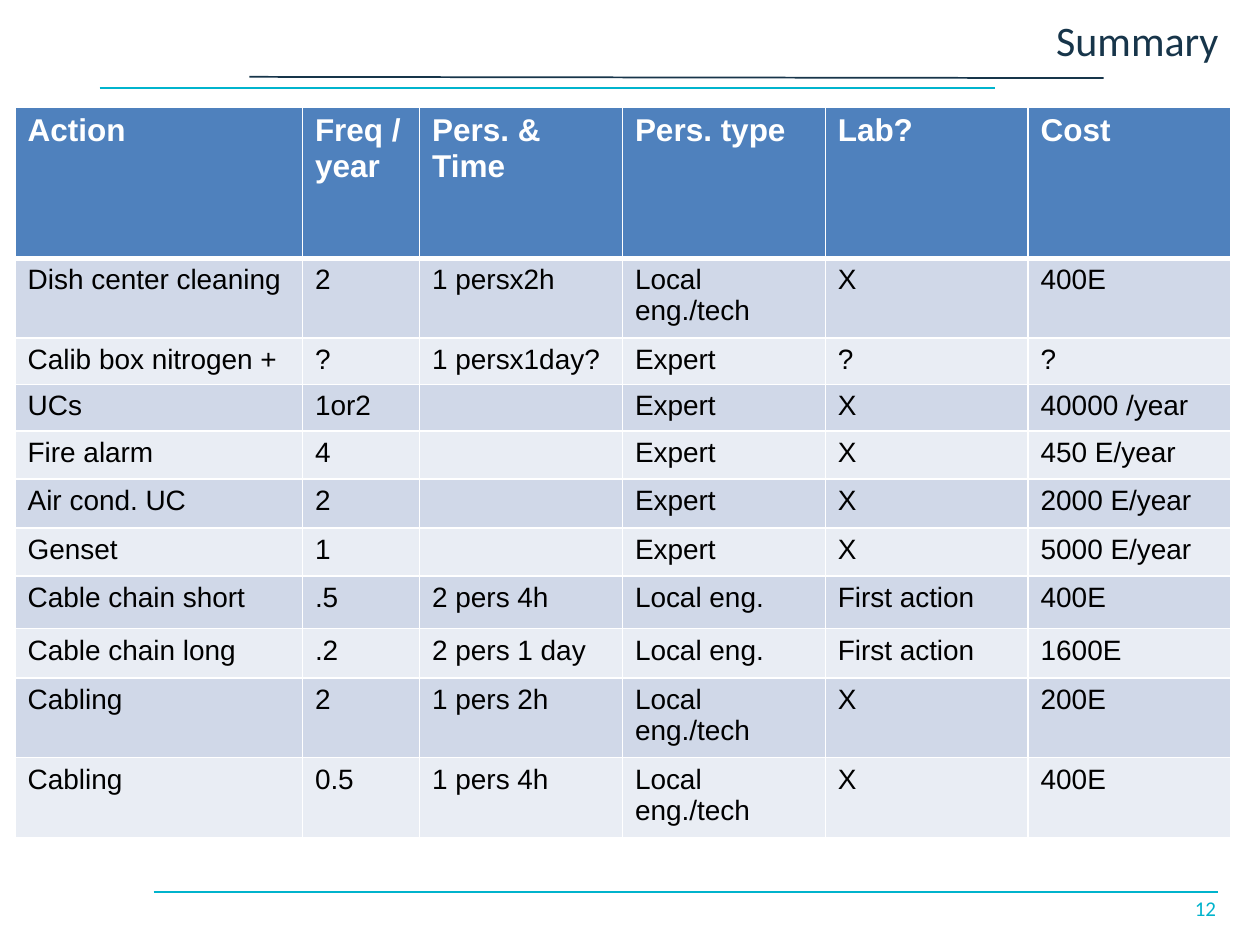
from lxml.etree import SubElement
from pptx import Presentation
from pptx.dml.color import RGBColor
from pptx.enum.shapes import MSO_CONNECTOR
from pptx.enum.text import MSO_ANCHOR, PP_ALIGN
from pptx.oxml.ns import qn
from pptx.util import Inches, Pt

NAVY = RGBColor(0x17, 0x35, 0x4A)
TEAL = RGBColor(0x00, 0xB4, 0xCD)
FOOTER_TEAL = RGBColor(0x00, 0xB3, 0xCC)
WHITE = RGBColor(0xFF, 0xFF, 0xFF)
BLACK = RGBColor(0x00, 0x00, 0x00)
HEADER_BLUE = RGBColor(0x4F, 0x81, 0xBD)
BANDS = [RGBColor(0xE9, 0xED, 0xF4), RGBColor(0xD0, 0xD8, 0xE8)]

COLUMN_WIDTHS = [2.28, 0.93, 1.61, 1.61, 1.61, 1.61]
ROW_HEIGHTS = [1.2, 0.59, 0.35, 0.37, 0.38, 0.39, 0.38, 0.42, 0.39, 0.59, 0.59]
ACTIONS = [
    ["Action", "Freq /year", "Pers. & Time", "Pers. type", "Lab?", "Cost"],
    ["Dish center cleaning", "2", "1 persx2h", "Local eng./tech", "X", "400E"],
    ["Calib box nitrogen +", "?", "1 persx1day?", "Expert", "?", "?"],
    ["UCs", "1or2", "", "Expert", "X", "40000 /year"],
    ["Fire alarm", "4", "", "Expert", "X", "450 E/year"],
    ["Air cond. UC", "2", "", "Expert", "X", "2000 E/year"],
    ["Genset", "1", "", "Expert", "X", "5000 E/year"],
    ["Cable chain short", ".5", "2 pers 4h", "Local eng.", "First action", "400E"],
    ["Cable chain long", ".2", "2 pers 1 day", "Local eng.", "First action", "1600E"],
    ["Cabling", "2", "1 pers 2h", "Local eng./tech", "X", "200E"],
    ["Cabling", "0.5", "1 pers 4h", "Local eng./tech", "X", "400E"],
]


def add_rule(page, start, end, color):
    """Draw a thin straight line between two points."""
    rule = page.shapes.add_connector(MSO_CONNECTOR.STRAIGHT, *map(Inches, start + end))
    rule.line.color.rgb = color
    rule.line.width = Pt(1)
    SubElement(rule._element.spPr, qn("a:effectLst"))


def format_text(paragraph, name, size, color, bold=False):
    """Set the font of every run in a paragraph."""
    for span in paragraph.runs:
        span.font.name = name
        span.font.size = Pt(size)
        span.font.color.rgb = color
        span.font.bold = bold


def add_label(page, position, text, size, color, anchor):
    """Add a right-aligned text box."""
    box = page.shapes.add_textbox(*map(Inches, position))
    frame = box.text_frame
    frame.word_wrap = True
    frame.vertical_anchor = anchor
    frame.text = text
    paragraph = frame.paragraphs[0]
    paragraph.alignment = PP_ALIGN.RIGHT
    format_text(paragraph, "Calibri", size, color)


def set_borders(cell, widths):
    """Give a cell white borders, with a width in points for each side."""
    properties = cell._tc.get_or_add_tcPr()
    for side, width in widths.items():
        line = SubElement(properties, qn(f"a:ln{side}"), w=str(Pt(width)))
        fill = SubElement(line, qn("a:solidFill"))
        SubElement(fill, qn("a:srgbClr"), val=str(WHITE))


def fill_cell(cell, text, row):
    """Write and style a cell according to its row."""
    header = row == 0
    set_borders(cell, {"L": 1, "R": 1, "T": 3 if row == 1 else 1, "B": 3 if header else 1})
    cell.fill.solid()
    cell.fill.fore_color.rgb = HEADER_BLUE if header else BANDS[row % 2]
    paragraph = cell.text_frame.paragraphs[0]
    if text:
        paragraph.text = text
        format_text(paragraph, "Arial", 18 if header else 16, WHITE if header else BLACK, header)
    else:
        SubElement(paragraph._p, qn("a:endParaRPr"), sz="1600")


def add_action_table(page):
    """Add the table of maintenance actions."""
    frame = page.shapes.add_table(
        len(ACTIONS), len(COLUMN_WIDTHS), Inches(0.12), Inches(0.85),
        Inches(sum(COLUMN_WIDTHS)), Inches(sum(ROW_HEIGHTS)))
    table = frame.table
    for column, width in zip(table.columns, COLUMN_WIDTHS):
        column.width = Inches(width)
    for index, (row, height) in enumerate(zip(table.rows, ROW_HEIGHTS)):
        row.height = Inches(height)
        for cell, text in zip(row.cells, ACTIONS[index]):
            fill_cell(cell, text, index)


def main():
    """Build the summary slide."""
    deck = Presentation()
    deck.slide_width, deck.slide_height = Inches(10), Inches(7.5)
    page = deck.slides.add_slide(deck.slide_layouts[6])
    add_rule(page, (1.22, 7.08), (9.67, 7.08), FOOTER_TEAL)
    add_rule(page, (0.79, 0.7), (7.9, 0.7), TEAL)
    add_rule(page, (1.98, 0.61), (8.76, 0.62), NAVY)
    add_label(page, (4.16, 0.07, 5.61, 0.49), "Summary", 24, NAVY, MSO_ANCHOR.MIDDLE)
    add_label(page, (8.62, 7.06, 1.13, 0.34), "12", 12, FOOTER_TEAL, MSO_ANCHOR.TOP)
    add_action_table(page)
    deck.save("out.pptx")


if __name__ == "__main__":
    main()
